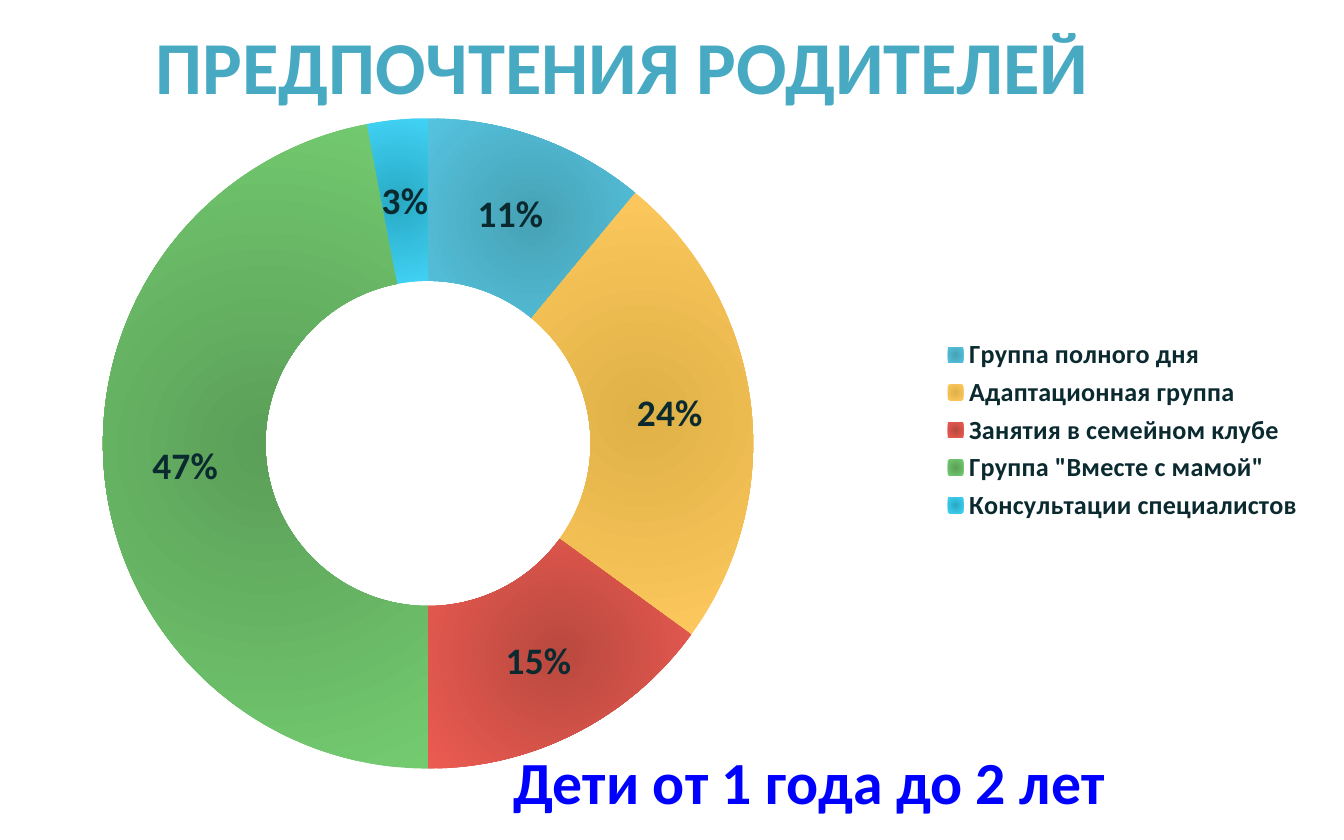
from typing import NamedTuple

from pptx import Presentation
from pptx.chart.data import CategoryChartData
from pptx.dml.color import RGBColor
from pptx.enum.chart import XL_CHART_TYPE, XL_LEGEND_POSITION
from pptx.enum.text import MSO_ANCHOR, PP_ALIGN
from pptx.oxml import parse_xml
from pptx.oxml.ns import nsdecls, qn
from pptx.util import Inches, Pt

FONT = "Calibri"
INK = "0A2A30"


class Label(NamedTuple):
    """A line of large text on the slide."""
    text: str
    box: tuple
    size: int
    color: str
    align: PP_ALIGN
    anchor: MSO_ANCHOR
    space: float


class Slice(NamedTuple):
    """A ring slice, shaded from its core colour to its rim colour."""
    name: str
    value: float
    core: str
    rim: str


LABELS = [
    Label("ПРЕДПОЧТЕНИЯ РОДИТЕЛЕЙ", (1.06, 0.21, 7.97, 0.67), 40, "48AAC2",
          PP_ALIGN.LEFT, MSO_ANCHOR.MIDDLE, 0.8),
    Label("Дети от 1 года до 2 лет", (2.32, 5.49, 7.4, 0.66), 32, "0000FF",
          PP_ALIGN.CENTER, MSO_ANCHOR.TOP, 1.0),
]
SLICES = [
    Slice("Группа полного дня", 0.11, "47A2B5", "55C3DF"),
    Slice("Адаптационная группа", 0.24, "DFB146", "FFC95F"),
    Slice("Занятия в семейном клубе", 0.15, "B9493E", "EC5B52"),
    Slice('Группа "Вместе с мамой"', 0.47, "5B9F58", "73CB70"),
    Slice("Консультации специалистов", 0.03, "29AAC5", "41D2F5"),
]


def paint(color, code: str) -> None:
    """Set a colour from a hex string."""
    color.rgb = RGBColor.from_string(code)


def style(font, size: int, code: str) -> None:
    """Make a font bold with the given size and colour."""
    font.name, font.size, font.bold = FONT, Pt(size), True
    paint(font.color, code)


def write(slide, label: Label) -> None:
    """Add one label to the slide."""
    frame = slide.shapes.add_textbox(*map(Inches, label.box)).text_frame
    frame.text = label.text
    frame.word_wrap = True
    frame.vertical_anchor = label.anchor
    para = frame.paragraphs[0]
    para.alignment, para.line_spacing = label.align, label.space
    style(para.runs[0].font, label.size, label.color)


def shade(series, parts: list[Slice]) -> None:
    """Give each slice a round gradient."""
    for index, part in enumerate(parts):
        fill = series.points[index].format.fill
        fill.gradient()
        for stop, code in zip(fill.gradient_stops, (part.core, part.rim)):
            paint(stop.color, code)
    for line in list(series._element.iter(qn("a:lin"))):
        line.getparent().replace(line, parse_xml(
            f'<a:path {nsdecls("a")} path="circle"><a:fillToRect '
            'l="50000" t="50000" r="50000" b="50000"/></a:path>'))


def place(chart, *area: float) -> None:
    """Fix the inner plot area by fractions of the chart."""
    items = "".join(f'<c:{key} val="{val}"/>' for key, val in zip("xywh", area))
    plot = chart._chartSpace.chart.plotArea
    for old in plot.findall(qn("c:layout")):
        plot.remove(old)
    plot.insert(0, parse_xml(
        f'<c:layout {nsdecls("c")}><c:manualLayout><c:layoutTarget val="inner"/>'
        f'<c:xMode val="edge"/><c:yMode val="edge"/>{items}'
        '</c:manualLayout></c:layout>'))


def draw(slide, parts: list[Slice]) -> None:
    """Add the ring chart with its legend."""
    data = CategoryChartData(number_format="0%")
    data.categories = [part.name for part in parts]
    data.add_series("Series 1", [part.value for part in parts])
    box = map(Inches, (0.35, 0.68, 9.45, 5.04))
    chart = slide.shapes.add_chart(XL_CHART_TYPE.DOUGHNUT, *box, data).chart
    chart.has_title = False
    chart.font.name, chart.font.size = "Open Sans", Pt(10)
    paint(chart.font.color, INK)
    chart.has_legend = True
    chart.legend.position = XL_LEGEND_POSITION.RIGHT
    chart.legend.include_in_layout = False
    style(chart.legend.font, 14, INK)
    place(chart, 0.04, 0.04, 0.52, 0.96)
    plot = chart.plots[0]
    plot.vary_by_categories = True
    series = plot.series[0]
    shade(series, parts)
    tags = series.data_labels
    tags.show_value, tags.show_percentage = True, False
    tags.number_format, tags.number_format_is_linked = "0%", False
    style(tags.font, 20, INK)


def main() -> None:
    """Build and save the slide."""
    deck = Presentation()
    deck.slide_width, deck.slide_height = Inches(10), Inches(6.25)
    slide = deck.slides.add_slide(deck.slide_layouts[6])
    for label in LABELS:
        write(slide, label)
    draw(slide, SLICES)
    deck.save("out.pptx")


if __name__ == "__main__":
    main()
